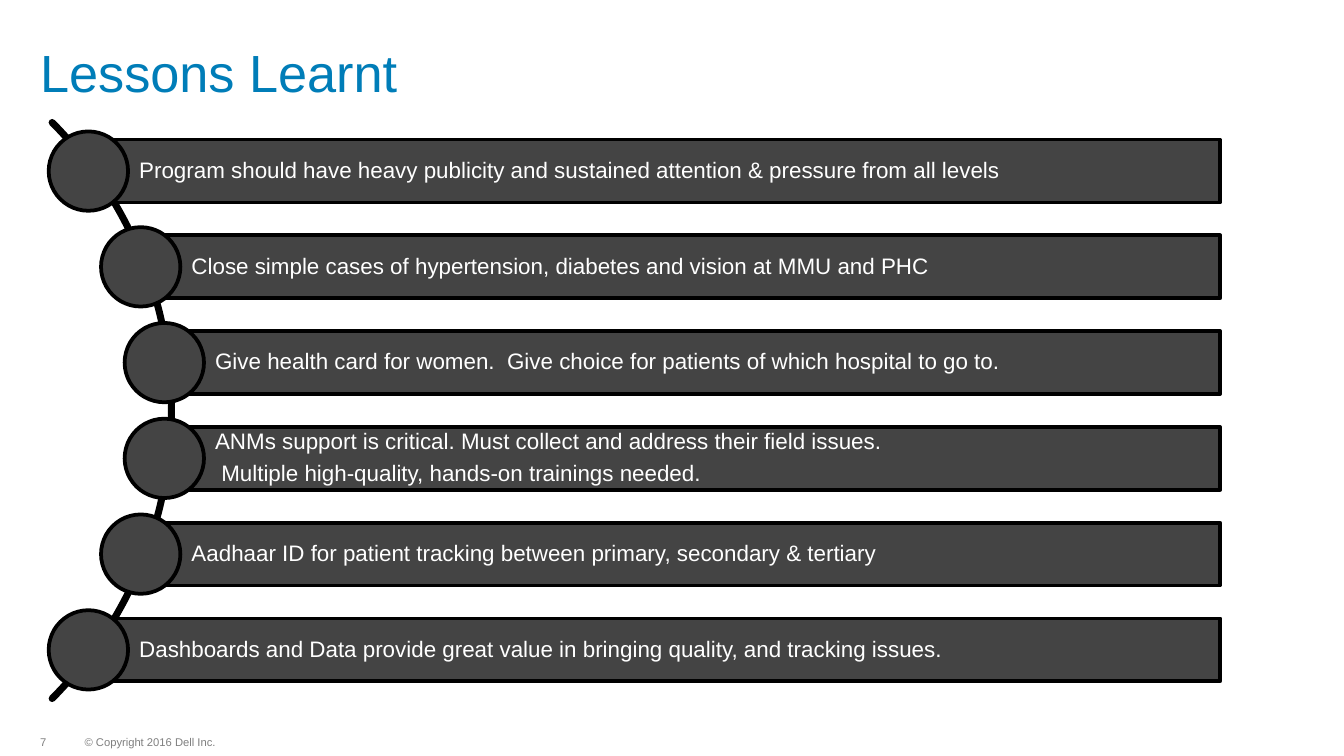
"""Builds the Lessons Learnt slide: six bars with round markers set along an arc."""
from dataclasses import dataclass
from math import cos, radians, sin, sqrt

from lxml import etree
from pptx import Presentation
from pptx.dml.color import RGBColor
from pptx.enum import shapes, text
from pptx.oxml.ns import qn
from pptx.util import Cm, Pt

TITLE = "Lessons Learnt"
LESSONS = [
    ["Program should have heavy publicity and sustained attention & pressure from all levels"],
    ["Close simple cases of hypertension, diabetes and vision at MMU and PHC"],
    ["Give health card for women.  Give choice for patients of which hospital to go to."],
    ["ANMs support is critical. Must collect and address their field issues.",
     " Multiple high-quality, hands-on trainings needed."],
    ["Aadhaar ID for patient tracking between primary, secondary & tertiary"],
    ["Dashboards and Data provide great value in bringing quality, and tracking issues."],
]
PAGE_NUMBER = "7"
COPYRIGHT = "© Copyright 2016 Dell Inc."


@dataclass(frozen=True)
class Theme:
    font: str = "Arial"
    title: str = "007DB8"
    fill: str = "444444"
    line: str = "000000"
    label: str = "FFFFFF"
    footer: str = "7F7F7F"
    number: str = "808080"
    title_size: float = 28
    label_size: float = 12
    footer_size: float = 6
    border: float = 2
    arc_width: float = 3.75


THEME = Theme()
CENTRE_X, CENTRE_Y = -4.46, 7.76
ARC_RADIUS, MARKER_RADIUS = 7.7, 7.62
PITCH, BAR_HEIGHT, BAR_RIGHT, MARKER = 1.81, 1.19, 23.06, 1.5


def rgb(value):
    return RGBColor.from_string(value)


def write(sp, lines, size, color, insets, anchor, wrap=True, after=0):
    tf = sp.text_frame
    tf.word_wrap = wrap
    tf.vertical_anchor = anchor
    tf.margin_left, tf.margin_top, tf.margin_right, tf.margin_bottom = map(Cm, insets)
    for i, line in enumerate(lines):
        p = tf.paragraphs[0] if i == 0 else tf.add_paragraph()
        p.alignment = text.PP_ALIGN.LEFT
        p.line_spacing = 0.9
        p.space_after = Pt(after)
        r = p.add_run()
        r.text = line
        r.font.name, r.font.size = THEME.font, Pt(size)
        r.font.color.rgb = rgb(color)


def add_label(s, box, line, size, color, insets, anchor, wrap):
    sp = s.shapes.add_textbox(*map(Cm, box))
    write(sp, [line], size, color, insets, anchor, wrap)


def add_block(s, kind, left, top, width, height):
    sp = s.shapes.add_shape(kind, Cm(left), Cm(top), Cm(width), Cm(height))
    sp.shadow.inherit = False
    sp.fill.solid()
    sp.fill.fore_color.rgb = rgb(THEME.fill)
    sp.line.color.rgb = rgb(THEME.line)
    sp.line.width = Pt(THEME.border)
    return sp


def add_arc(s):
    points = [(Cm(CENTRE_X + ARC_RADIUS * cos(radians(a))),
               Cm(CENTRE_Y + ARC_RADIUS * sin(radians(a)))) for a in range(-45, 46)]
    path = s.shapes.build_freeform(*points[0])
    path.add_line_segments(points[1:], close=False)
    sp = path.convert_to_shape()
    sp.shadow.inherit = False
    sp.fill.background()
    sp.line.color.rgb = rgb(THEME.line)
    sp.line.width = Pt(THEME.arc_width)
    ln = sp.line._get_or_add_ln()
    ln.set("cap", "rnd")
    etree.SubElement(ln, qn("a:round"))


def add_lesson(s, index, lines):
    offset = (index - (len(LESSONS) - 1) / 2) * PITCH
    x = CENTRE_X + sqrt(MARKER_RADIUS ** 2 - offset ** 2)
    y = CENTRE_Y + offset
    bar = add_block(s, shapes.MSO_SHAPE.RECTANGLE, x, y - BAR_HEIGHT / 2,
                    BAR_RIGHT - x, BAR_HEIGHT)
    write(bar, lines, THEME.label_size, THEME.label, (0.96, 0.08, 0.08, 0.08),
          text.MSO_ANCHOR.MIDDLE, after=THEME.label_size * 0.35)
    add_block(s, shapes.MSO_SHAPE.OVAL, x - MARKER / 2, y - MARKER / 2, MARKER, MARKER)


def main():
    prs = Presentation()
    prs.slide_width, prs.slide_height = Cm(25.4), Cm(14.29)
    s = prs.slides.add_slide(prs.slide_layouts[6])
    flush, middle = (0, 0, 0, 0), text.MSO_ANCHOR.MIDDLE
    add_label(s, (1.6, 13.92, 2.49, 0.23), COPYRIGHT, THEME.footer_size,
              THEME.footer, flush, middle, False)
    add_label(s, (0.76, 13.92, 0.25, 0.23), PAGE_NUMBER, THEME.footer_size,
              THEME.number, flush, middle, False)
    add_label(s, (0.76, 0.76, 22.1, 1.78), TITLE, THEME.title_size,
              THEME.title, (0, 0.13, 0, 0.13), text.MSO_ANCHOR.TOP, True)
    add_arc(s)
    for index, lines in enumerate(LESSONS):
        add_lesson(s, index, lines)
    prs.save("out.pptx")


if __name__ == "__main__":
    main()
